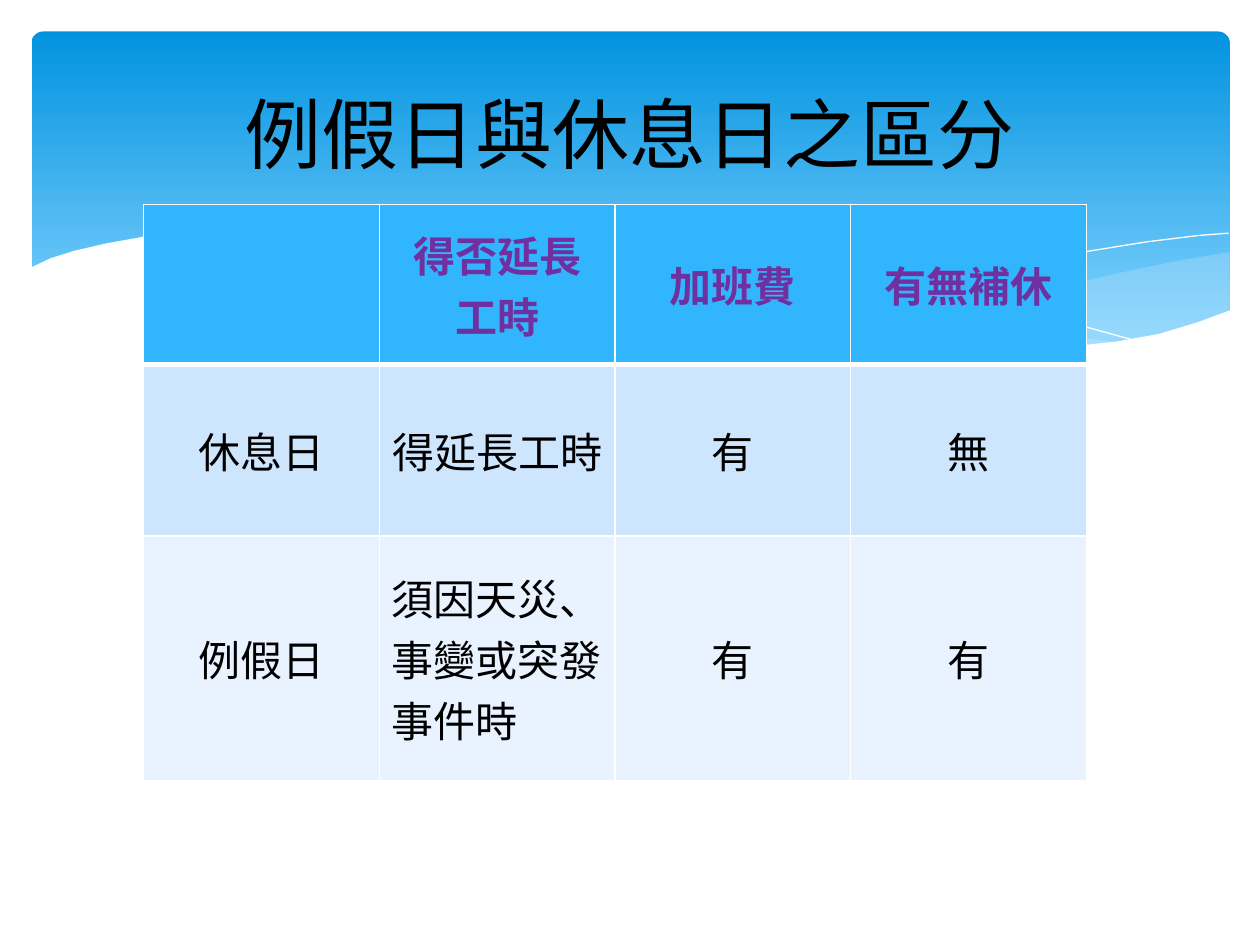
from dataclasses import dataclass
from typing import Optional

from lxml import etree
from pptx import Presentation
from pptx.dml.color import RGBColor
from pptx.enum.shapes import MSO_SHAPE
from pptx.enum.text import MSO_ANCHOR, PP_ALIGN
from pptx.oxml.ns import qn
from pptx.util import Pt

ROUNDED = MSO_SHAPE.ROUNDED_RECTANGLE
MIDDLE = MSO_ANCHOR.MIDDLE
LEFT, CENTER = PP_ALIGN.LEFT, PP_ALIGN.CENTER

WHITE = RGBColor(0xFF, 0xFF, 0xFF)
BLACK = RGBColor(0x00, 0x00, 0x00)
PURPLE = RGBColor(0x70, 0x30, 0xA0)
SKY_DARK = RGBColor(0x02, 0x93, 0xE0)
SKY_LIGHT = RGBColor(0x83, 0xD3, 0xFE)
MIST = RGBColor(0xC6, 0xE7, 0xFC)
HEADER_BLUE = RGBColor(0x31, 0xB6, 0xFD)
BAND_BLUE = RGBColor(0xCE, 0xE5, 0xFE)
BAND_PALE = RGBColor(0xE8, 0xF3, 0xFF)


@dataclass(frozen=True)
class Wave:
    """A filled wave, or a white hairline when fill is None."""
    points: list[tuple[float, float]]
    fill: Optional[RGBColor] = None
    opacity: int = 100


@dataclass(frozen=True)
class TableRow:
    height: float
    fill: RGBColor
    texts: list[str]
    font: str = "Arial"
    color: RGBColor = BLACK
    bold: bool = False
    rule: float = 1


WAVES = [
    Wave([(702.7, 144), (673.2, 149), (641.5, 155.5), (599, 165.6), (560.9, 175),
          (524.9, 182.2), (475.9, 190.8), (507.6, 195.1), (545, 198.7),
          (578.2, 200.2), (614.9, 198.7), (645.8, 194.4), (673.2, 188.6),
          (702.7, 177.8)], MIST, 29),
    Wave([(643, 196.6), (602.6, 190.8), (558, 182.9), (508.3, 172.8), (452.9, 159.8),
          (409.7, 149.8), (370.1, 142.6), (317.5, 136.1), (273.6, 133.9),
          (236.2, 134.6), (205.9, 137.5), (246.2, 143.3), (290.9, 151.9),
          (353.5, 167), (407.5, 178.6), (456.5, 187.9), (500.4, 194.4),
          (538.6, 198.7), (581, 200.9), (610.6, 200.2)], MIST, 40),
    Wave([(222.5, 140.4), (247, 136.8), (278.6, 134.6), (324, 135.4), (367.2, 138.2),
          (419, 144), (478.8, 153.4), (523.4, 162.7), (572.4, 174.2),
          (598.3, 180.7), (653, 195.8)]),
    Wave([(441.4, 185), (483.8, 173.5), (538.6, 160.6), (580.3, 151.2),
          (623.5, 143.3), (655.2, 138.2), (684.7, 134.6), (702, 133.2)]),
    Wave([(703.4, 177.1), (684, 184.3), (662.4, 190.8), (638.6, 195.1), (612, 198),
          (582.5, 199.4), (547.9, 198), (509.8, 194.4), (465.8, 188.6),
          (416.9, 180), (362.2, 167.8), (301, 153.4), (244.1, 141.8),
          (195.1, 135.4), (151.9, 132.5), (115.9, 132.5), (85.7, 134.6),
          (61.2, 139), (42.5, 143.3), (28.8, 147.6), (16.6, 153.4),
          (16.6, 236.9), (703.4, 236.9)], WHITE),
]

ROWS = [
    TableRow(91.4, HEADER_BLUE, ["", "得否延長\n工時", "加班費", "有無補休"],
             font="Calibri", color=PURPLE, bold=True, rule=3),
    TableRow(97.9, BAND_BLUE, ["休息日", "得延長工時", "有", "無"]),
    TableRow(139.7, BAND_PALE, ["例假日", "須因天災、事變或突發事件時", "有", "有"]),
]
COLUMN_WIDTH = 134.7
WRAPPED_TEXT = "須因天災、事變或突發事件時"


def write_text(frame, text: str, *, size: float, font: str, color: RGBColor = BLACK,
               bold: bool = False, align=CENTER) -> None:
    """Write one paragraph for each line of text."""
    for index, line in enumerate(text.split("\n")):
        para = frame.paragraphs[0] if index == 0 else frame.add_paragraph()
        para.alignment = align
        span = para.add_run()
        span.text = line
        span.font.size = Pt(size)
        span.font.name = font
        span.font.bold = bold
        span.font.color.rgb = color


def draw_sky(page) -> None:
    sky = page.shapes.add_shape(ROUNDED, Pt(18), Pt(18), Pt(684.7), Pt(194.4))
    sky.adjustments[0] = 0.034
    sky.shadow.inherit = False
    sky.line.fill.background()
    sky.fill.gradient()
    sky.fill.gradient_angle = 270
    stops = zip(sky.fill.gradient_stops, (SKY_DARK, SKY_LIGHT), (0, 0.9))
    for stop, color, position in stops:
        stop.color.rgb = color
        stop.position = position


def draw_wave(page, wave: Wave) -> None:
    points = [(Pt(x), Pt(y)) for x, y in wave.points]
    builder = page.shapes.build_freeform(*points[0])
    builder.add_line_segments(points[1:], close=wave.fill is not None)
    shape = builder.convert_to_shape()
    shape.shadow.inherit = False
    if wave.fill is None:
        shape.fill.background()
        shape.line.color.rgb = WHITE
        shape.line.width = Pt(0)
        return
    shape.line.fill.background()
    shape.fill.solid()
    shape.fill.fore_color.rgb = wave.fill
    if wave.opacity < 100:
        color = next(shape.element.spPr.iter(qn("a:srgbClr")))
        etree.SubElement(color, qn("a:alpha"), val=str(wave.opacity * 1000))


def set_borders(cell, top: float, bottom: float) -> None:
    properties = cell._tc.get_or_add_tcPr()
    for side, width in (("L", 1), ("R", 1), ("T", top), ("B", bottom)):
        line = etree.SubElement(properties, qn(f"a:ln{side}"), w=str(Pt(width)))
        fill = etree.SubElement(line, qn("a:solidFill"))
        etree.SubElement(fill, qn("a:srgbClr"), val=str(WHITE))


def draw_table(page, rows: list[TableRow]) -> None:
    columns = len(rows[0].texts)
    height = sum(row.height for row in rows)
    table = page.shapes.add_table(len(rows), columns, Pt(82.1), Pt(116.9),
                                  Pt(COLUMN_WIDTH * columns), Pt(height)).table
    for column in table.columns:
        column.width = Pt(COLUMN_WIDTH)
    top = 1
    for index, row in enumerate(rows):
        table.rows[index].height = Pt(row.height)
        for cell, text in zip(table.rows[index].cells, row.texts):
            set_borders(cell, top, row.rule)
            cell.fill.solid()
            cell.fill.fore_color.rgb = row.fill
            cell.vertical_anchor = MIDDLE
            if text:
                write_text(cell.text_frame, text, size=24, font=row.font,
                           color=row.color, bold=row.bold,
                           align=LEFT if text == WRAPPED_TEXT else CENTER)
        top = row.rule


def draw_title(page, text: str) -> None:
    box = page.shapes.add_textbox(Pt(36), Pt(26.6), Pt(648), Pt(98.6))
    box.text_frame.word_wrap = True
    box.text_frame.vertical_anchor = MIDDLE
    write_text(box.text_frame, text, size=44, font="Calibri")


def main() -> None:
    deck = Presentation()
    deck.slide_width, deck.slide_height = Pt(720), Pt(540)
    page = deck.slides.add_slide(deck.slide_layouts[6])
    draw_sky(page)
    for wave in WAVES:
        draw_wave(page, wave)
    draw_title(page, "例假日與休息日之區分")
    draw_table(page, ROWS)
    deck.save("out.pptx")


if __name__ == "__main__":
    main()
